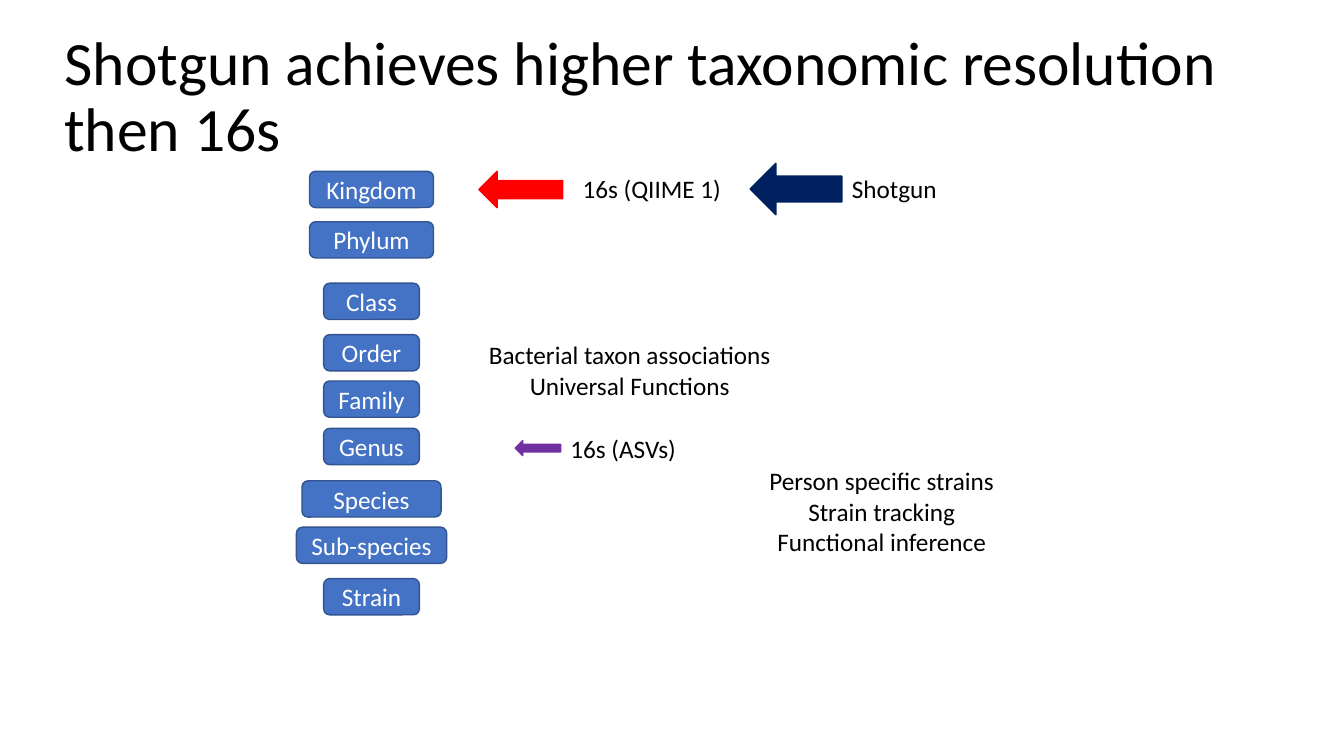
from dataclasses import dataclass

from pptx import Presentation
from pptx.dml.color import RGBColor
from pptx.enum.shapes import MSO_SHAPE
from pptx.enum.text import MSO_ANCHOR, PP_ALIGN
from pptx.util import Inches, Pt

ROUNDED = MSO_SHAPE.ROUNDED_RECTANGLE
ARROW = MSO_SHAPE.RIGHT_ARROW
MIDDLE = MSO_ANCHOR.MIDDLE
TOP = MSO_ANCHOR.TOP
LEFT = PP_ALIGN.LEFT
CENTER = PP_ALIGN.CENTER

FONT = "Calibri"
BLACK = "000000"
WHITE = "FFFFFF"
RANK_FILL = "4472C4"
RANK_LINE = "325491"
RANK_CENTER = 3.685
RANK_HEIGHT = 0.36


@dataclass
class Rank:
    name: str
    top: float
    width: float = 0.95


@dataclass
class Arrow:
    left: float
    top: float
    width: float
    height: float
    color: str


@dataclass
class Label:
    lines: list[str]
    left: float
    top: float
    width: float
    height: float
    align: PP_ALIGN = LEFT
    size: int = 18
    spacing: float = 1.0
    anchor: MSO_ANCHOR = TOP


RANKS = [
    Rank("Kingdom", 1.7, 1.23),
    Rank("Phylum", 2.2, 1.23),
    Rank("Class", 2.81),
    Rank("Order", 3.32),
    Rank("Family", 3.78),
    Rank("Genus", 4.25),
    Rank("Species", 4.77, 1.38),
    Rank("Sub-species", 5.23, 1.49),
    Rank("Strain", 5.74),
]

ARROWS = [
    Arrow(4.75, 1.7, 0.83, 0.36, "FF0000"),
    Arrow(5.11, 4.37, 0.45, 0.15, "7030A0"),
    Arrow(7.44, 1.62, 0.91, 0.51, "002060"),
]

TITLE = Label(["Shotgun achieves higher taxonomic resolution then 16s"],
              0.54, 0.25, 12.25, 1.45, size=44, spacing=0.9, anchor=MIDDLE)

LABELS = [
    Label(["16s (QIIME 1)"], 5.68, 1.67, 1.75, 0.4),
    Label(["16s (ASVs)"], 5.56, 4.25, 1.33, 0.4),
    Label(["Shotgun"], 8.35, 1.67, 1.7, 0.4),
    Label(["Bacterial taxon associations", "Universal Functions"],
          4.6, 3.32, 3.29, 0.71, CENTER),
    Label(["Person specific strains", "Strain tracking", "Functional inference"],
          7.1, 4.57, 3.29, 1.01, CENTER),
]


def rgb(value: str) -> RGBColor:
    return RGBColor.from_string(value)


def write_lines(frame, lines: list[str], size: int, color: str,
                align: PP_ALIGN, anchor: MSO_ANCHOR, spacing: float = 1.0) -> None:
    frame.word_wrap = True
    frame.vertical_anchor = anchor
    for index, line in enumerate(lines):
        paragraph = frame.add_paragraph() if index else frame.paragraphs[0]
        paragraph.alignment = align
        paragraph.line_spacing = spacing
        run = paragraph.add_run()
        run.text = line
        run.font.name = FONT
        run.font.size = Pt(size)
        run.font.color.rgb = rgb(color)


def add_filled_shape(slide, kind: MSO_SHAPE, left: float, top: float,
                     width: float, height: float, fill: str, line: str):
    shape = slide.shapes.add_shape(kind, Inches(left), Inches(top),
                                   Inches(width), Inches(height))
    shape.shadow.inherit = False
    shape.fill.solid()
    shape.fill.fore_color.rgb = rgb(fill)
    shape.line.color.rgb = rgb(line)
    shape.line.width = Pt(1)
    return shape


def add_rank(slide, rank: Rank) -> None:
    shape = add_filled_shape(slide, ROUNDED, RANK_CENTER - rank.width / 2, rank.top,
                             rank.width, RANK_HEIGHT, RANK_FILL, RANK_LINE)
    write_lines(shape.text_frame, [rank.name], 18, WHITE, CENTER, MIDDLE)


def add_arrow(slide, arrow: Arrow) -> None:
    shape = add_filled_shape(slide, ARROW, arrow.left, arrow.top, arrow.width,
                             arrow.height, arrow.color, arrow.color)
    shape.rotation = 180


def add_label(slide, label: Label) -> None:
    box = slide.shapes.add_textbox(Inches(label.left), Inches(label.top),
                                   Inches(label.width), Inches(label.height))
    write_lines(box.text_frame, label.lines, label.size, BLACK,
                label.align, label.anchor, label.spacing)


def main() -> None:
    presentation = Presentation()
    presentation.slide_width = Inches(13.33)
    presentation.slide_height = Inches(7.5)
    slide = presentation.slides.add_slide(presentation.slide_layouts[6])
    add_label(slide, TITLE)
    for rank in RANKS:
        add_rank(slide, rank)
    for arrow in ARROWS:
        add_arrow(slide, arrow)
    for label in LABELS:
        add_label(slide, label)
    presentation.save("out.pptx")


if __name__ == "__main__":
    main()
